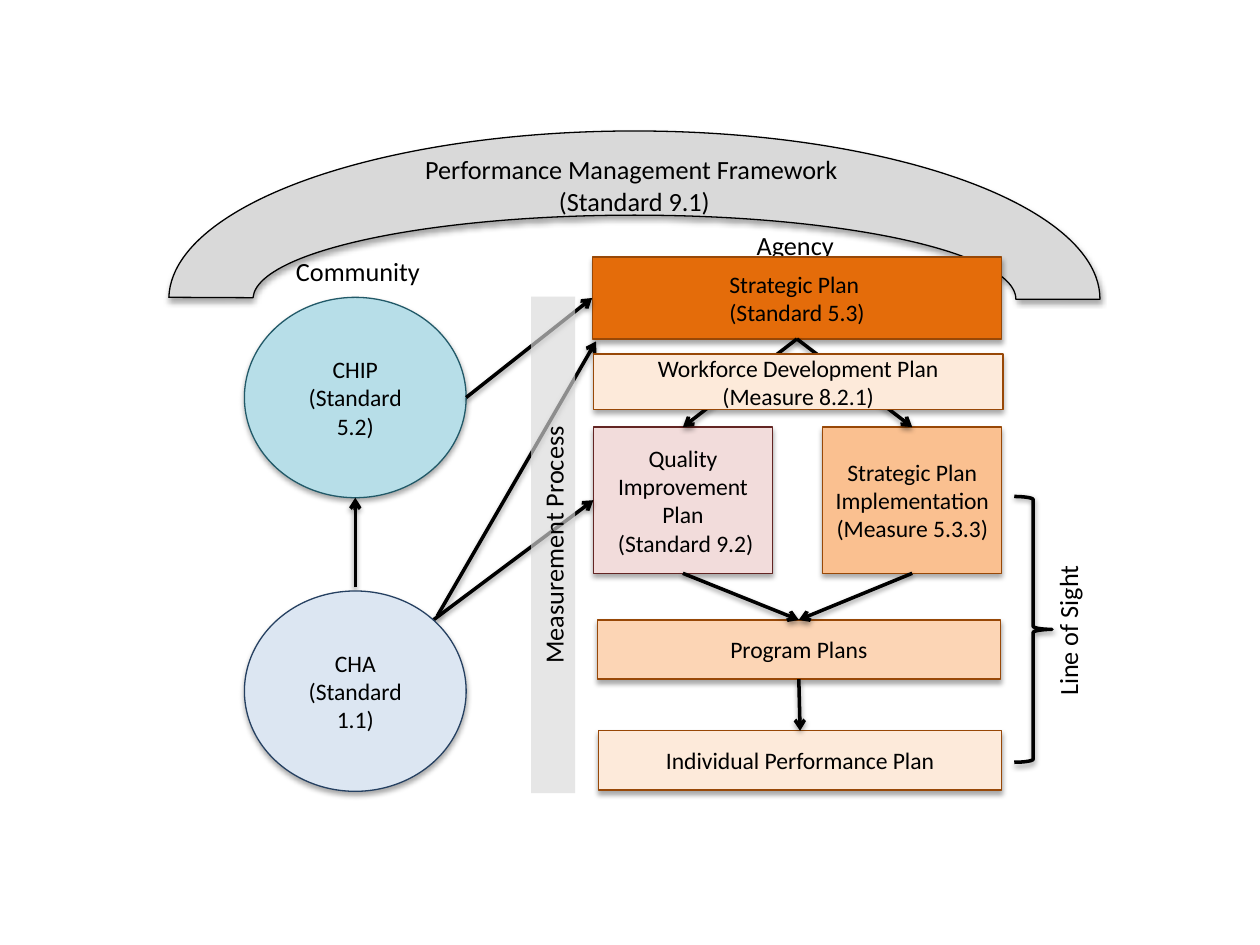
from dataclasses import dataclass

import pptx
import pptx.dml.color
import pptx.enum.shapes
import pptx.enum.text
import pptx.oxml
import pptx.oxml.ns
import pptx.util

RGBColor = pptx.dml.color.RGBColor
Shape = pptx.enum.shapes.MSO_SHAPE
Anchor = pptx.enum.text.MSO_ANCHOR

BLACK = RGBColor(0x00, 0x00, 0x00)
GREY = RGBColor(0xD9, 0xD9, 0xD9)
AQUA = RGBColor(0xB7, 0xDE, 0xE8)
DARK_AQUA = RGBColor(0x21, 0x59, 0x68)
PALE_BLUE = RGBColor(0xDC, 0xE6, 0xF2)
NAVY = RGBColor(0x25, 0x40, 0x61)
ROSE = RGBColor(0xF2, 0xDC, 0xDB)
MAROON = RGBColor(0x63, 0x25, 0x23)
ORANGE = RGBColor(0xE4, 0x6C, 0x0A)
MID_ORANGE = RGBColor(0xFA, 0xC0, 0x90)
LIGHT_ORANGE = RGBColor(0xFC, 0xD5, 0xB5)
PALE_ORANGE = RGBColor(0xFD, 0xEA, 0xDA)
BROWN = RGBColor(0x98, 0x48, 0x07)

FONT = "Calibri"
LABEL_SIZE, PANEL_SIZE = 15, 13.5
COLUMNS, ROWS = 100, 75  # the slide's grid of square cells

deck = pptx.Presentation()
deck.slide_width = pptx.util.Inches(10)
deck.slide_height = pptx.util.Inches(7.5)
slide = deck.slides.add_slide(deck.slide_layouts[6])


@dataclass(frozen=True)
class Area:
    """A rectangle in grid columns and rows."""
    left: float
    top: float
    width: float
    height: float

    @property
    def center(self) -> float:
        return self.left + self.width / 2

    @property
    def middle(self) -> float:
        return self.top + self.height / 2

    @property
    def top_point(self) -> tuple[float, float]:
        return self.center, self.top

    @property
    def bottom_point(self) -> tuple[float, float]:
        return self.center, self.top + self.height

    @property
    def left_point(self) -> tuple[float, float]:
        return self.left, self.middle

    @property
    def right_point(self) -> tuple[float, float]:
        return self.left + self.width, self.middle


@dataclass(frozen=True)
class Panel:
    area: Area
    lines: tuple[str, ...]
    fill: RGBColor
    outline: RGBColor
    kind: Shape = Shape.RECTANGLE


def column(count: float) -> int:
    return round(deck.slide_width * count / COLUMNS)


def row(count: float) -> int:
    return round(deck.slide_height * count / ROWS)


def place(area: Area) -> tuple[int, int, int, int]:
    return column(area.left), row(area.top), column(area.width), row(area.height)


def add_shadow(shape, opacity: int, distance: float) -> None:
    shape._element.spPr.append(pptx.oxml.parse_xml(
        f'<a:effectLst {pptx.oxml.ns.nsdecls("a")}>'
        f'<a:outerShdw blurRad="{pptx.util.Pt(3.1)}" dist="{pptx.util.Pt(distance)}" '
        'dir="5400000" rotWithShape="0"><a:srgbClr val="000000">'
        f'<a:alpha val="{opacity * 1000}"/></a:srgbClr></a:outerShdw></a:effectLst>'))


def write(shape, lines: tuple[str, ...], size: float, anchor: Anchor) -> None:
    frame = shape.text_frame
    frame.word_wrap = True
    frame.vertical_anchor = anchor
    for index, line in enumerate(lines):
        para = frame.paragraphs[0] if index == 0 else frame.add_paragraph()
        para.alignment = pptx.enum.text.PP_ALIGN.CENTER
        span = para.add_run()
        span.text = line
        span.font.name = FONT
        span.font.size = pptx.util.Pt(size)
        span.font.color.rgb = BLACK


def add_panel(panel: Panel, size: float = PANEL_SIZE, anchor: Anchor = Anchor.MIDDLE):
    box = slide.shapes.add_shape(panel.kind, *place(panel.area))
    box.fill.solid()
    box.fill.fore_color.rgb = panel.fill
    box.line.color.rgb = panel.outline
    box.line.width = pptx.util.Pt(0.75)
    add_shadow(box, 35, 1.8)
    write(box, panel.lines, size, anchor)
    return box


def add_label(area: Area, text: str, rotation: float = 0) -> None:
    box = slide.shapes.add_textbox(*place(area))
    box.rotation = rotation
    write(box, (text,), LABEL_SIZE, Anchor.TOP)


def add_arrow(start: tuple[float, float], end: tuple[float, float]) -> None:
    arrow = slide.shapes.add_connector(
        pptx.enum.shapes.MSO_CONNECTOR.STRAIGHT,
        column(start[0]), row(start[1]), column(end[0]), row(end[1]))
    arrow.line.color.rgb = BLACK
    arrow.line.width = pptx.util.Pt(2)
    arrow.line._get_or_add_ln().append(pptx.oxml.parse_xml(
        f'<a:tailEnd {pptx.oxml.ns.nsdecls("a")} type="arrow"/>'))
    add_shadow(arrow, 38, 1.6)


framework = Panel(Area(13.4, 10.4, 73.9, 26.7),
                  ("Performance Management Framework ", "(Standard 9.1)"),
                  GREY, BLACK, Shape.BLOCK_ARC)
chip = Panel(Area(19.4, 23.6, 17.6, 15.9), ("CHIP (Standard 5.2)",),
             AQUA, DARK_AQUA, Shape.OVAL)
cha = Panel(Area(19.4, 46.9, 17.6, 15.9), ("CHA (Standard 1.1)",),
            PALE_BLUE, NAVY, Shape.OVAL)
strategy = Panel(Area(47, 20.4, 32.5, 6.5), ("Strategic Plan ", "(Standard 5.3)"),
                 ORANGE, BROWN)
workforce = Panel(Area(47.1, 28.1, 32.5, 4.4),
                  ("Workforce Development Plan", "(Measure 8.2.1)"), PALE_ORANGE, BROWN)
implementation = Panel(Area(65.3, 33.9, 14.2, 11.6),
                       ("Strategic Plan Implementation (Measure 5.3.3) ",),
                       MID_ORANGE, BROWN)
quality = Panel(Area(47.1, 33.9, 14.2, 11.6),
                ("Quality Improvement Plan", " (Standard 9.2)"), ROSE, MAROON)
programs = Panel(Area(47.4, 49.2, 32, 4.7), ("Program Plans",), LIGHT_ORANGE, BROWN)
individual = Panel(Area(47.5, 58, 32, 4.7), ("Individual Performance Plan",),
                   PALE_ORANGE, BROWN)

arc = add_panel(framework, LABEL_SIZE, Anchor.TOP)
for index, value in enumerate((108.14, 0, 0.25)):
    arc.adjustments[index] = value
arc.text_frame.margin_top = row(1.8)

add_panel(chip)
add_label(Area(21.6, 19.8, 14.1, 4), "Community ")
add_label(Area(56.3, 17.7, 14.1, 3.5), "Agency ")
for panel in (strategy, implementation, quality, programs, individual):
    add_panel(panel)

for start, end in (
    ((cha.area.center, 46.6), chip.area.bottom_point),
    ((34.7, 48.9), (47.3, 27.1)),
    (chip.area.right_point, strategy.area.left_point),
    ((34.4, 49.2), quality.area.left_point),
    (strategy.area.bottom_point, quality.area.top_point),
    (strategy.area.bottom_point, implementation.area.top_point),
    (quality.area.bottom_point, programs.area.top_point),
    (implementation.area.bottom_point, programs.area.top_point),
    (programs.area.bottom_point, individual.area.top_point),
):
    add_arrow(start, end)

brace = slide.shapes.add_shape(Shape.RIGHT_BRACE, *place(Area(80.5, 39.4, 3, 21.1)))
brace.fill.background()
brace.line.color.rgb = BLACK
brace.line.width = pptx.util.Pt(2)
add_shadow(brace, 38, 1.6)
add_label(Area(77.6, 48.3, 14.3, 3.5), "Line of Sight", 270)

add_panel(cha)

process = slide.shapes.add_shape(Shape.RECTANGLE, *place(Area(24.2, 41.5, 39.4, 3.5)))
process.rotation = 270
process.shadow.inherit = False
process.line.fill.background()
process.fill.solid()
process.fill.fore_color.rgb = GREY
process.fill._xPr.find(".//" + pptx.oxml.ns.qn("a:srgbClr")).append(
    pptx.oxml.parse_xml(f'<a:alpha {pptx.oxml.ns.nsdecls("a")} val="65000"/>'))
write(process, ("Measurement Process",), LABEL_SIZE, Anchor.TOP)

add_panel(workforce)

deck.save("out.pptx")
